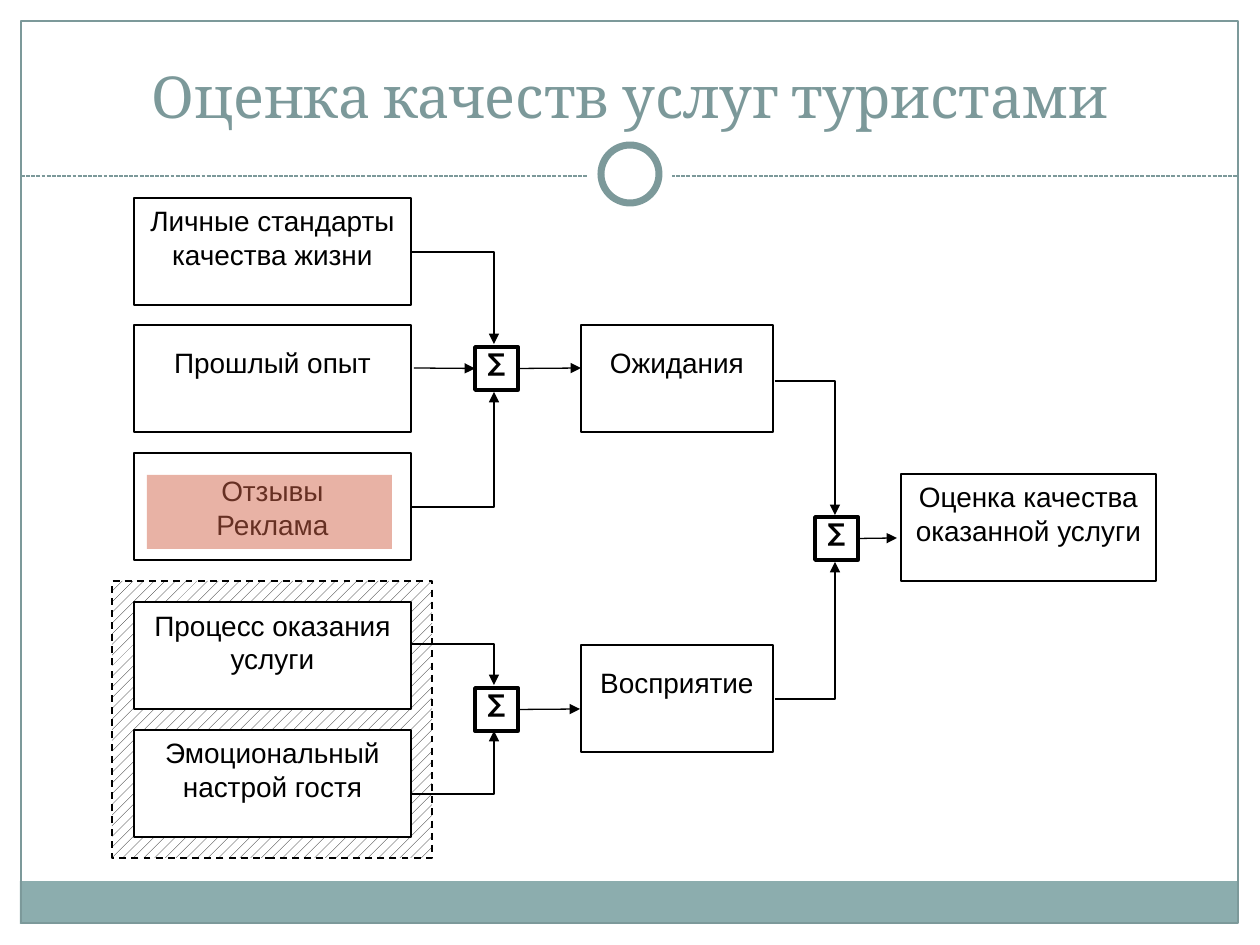
import pptx
import pptx.util
import pptx.dml.color
import pptx.enum.dml
import pptx.enum.shapes
import pptx.enum.text
import pptx.oxml.ns
from lxml import etree

RGB = pptx.dml.color.RGBColor
SHAPE = pptx.enum.shapes.MSO_SHAPE
ANCHOR = pptx.enum.text.MSO_ANCHOR
DASH = pptx.enum.dml.MSO_LINE
STRAIGHT = pptx.enum.shapes.MSO_CONNECTOR.STRAIGHT
Pt = pptx.util.Pt

WHITE = RGB(0xFF, 0xFF, 0xFF)
BLACK = RGB(0x00, 0x00, 0x00)
TEAL = RGB(0x7C, 0x99, 0x9A)
BAND = RGB(0x8C, 0xAD, 0xAE)
ACCENT = RGB(0xD1, 0x63, 0x49)

TITLE = "Оценка качеств услуг туристами"
LEFT, RIGHT, TOP, BOTTOM = 0, 1, 2, 3
BOX_H, SIGMA = 107, 43
SOURCE_X, SOURCE_W = 134, 277
STAGE_X, STAGE_W = 581, 192
LOW_TEXT, HIGH_TEXT = 21, 6  # top inset of the box text

# x, y, width, top inset, paragraphs
BOXES = [
    (SOURCE_X, 198, SOURCE_W, HIGH_TEXT, ["Личные стандарты качества жизни"]),
    (SOURCE_X, 325, SOURCE_W, LOW_TEXT, ["Прошлый опыт"]),
    (SOURCE_X, 453, SOURCE_W, LOW_TEXT, ["Отзывы", "Реклама"]),
    (SOURCE_X, 602, SOURCE_W, HIGH_TEXT, ["Процесс оказания услуги"]),
    (SOURCE_X, 730, SOURCE_W, HIGH_TEXT, ["Эмоциональный настрой гостя"]),
    (STAGE_X, 325, STAGE_W, LOW_TEXT, ["Ожидания"]),
    (STAGE_X, 645, STAGE_W, LOW_TEXT, ["Восприятие"]),
    (901, 474, 255, HIGH_TEXT, ["Оценка качества оказанной услуги"]),
]
SIGMAS = {"expect": (475, 347), "perceive": (475, 688), "rate": (815, 517)}
# start x, start y, corner x, end y
ELBOWS = [
    (411, 252, 494, 344),
    (412, 507, 494, 392),
    (412, 644, 494, 685),
    (411, 794, 494, 731),
    (775, 381, 835, 515),
    (775, 699, 835, 562),
]
# sigma, x where the outgoing arrow ends
OUTGOING = [("expect", 581), ("perceive", 580), ("rate", 897)]

prs = pptx.Presentation()
prs.slide_width = pptx.util.Inches(10)
prs.slide_height = pptx.util.Inches(7.5)
s = prs.slides.add_slide(prs.slide_layouts[6])


def px(n):
    return round(n * 914400 / 126)


def add_block(x, y, w, h, fill=None, line=None, width=1.0, kind=SHAPE.RECTANGLE):
    sp = s.shapes.add_shape(kind, px(x), px(y), px(w), px(h))
    sp.shadow.inherit = False
    if fill is None:
        sp.fill.background()
    else:
        sp.fill.solid()
        sp.fill.fore_color.rgb = fill
    if line is None:
        sp.line.fill.background()
    else:
        sp.line.color.rgb = line
        sp.line.width = Pt(width)
    return sp


def write(sp, paragraphs, size, font, color, insets, anchor=ANCHOR.TOP, strong=None):
    tf = sp.text_frame
    tf.word_wrap = True
    tf.vertical_anchor = anchor
    tf.margin_left, tf.margin_top, tf.margin_right, tf.margin_bottom = map(px, insets)
    for i, text in enumerate(paragraphs):
        p = tf.add_paragraph() if i else tf.paragraphs[0]
        p.alignment = pptx.enum.text.PP_ALIGN.CENTER
        r = p.add_run()
        r.text = text
        r.font.size = Pt(size)
        r.font.name = font
        r.font.bold = r.font.italic = strong
        r.font.color.rgb = color


def style_line(sp, color, arrow=True):
    sp.line.color.rgb = color
    sp.line.width = Pt(0.75)
    if arrow:
        ln = sp.line._get_or_add_ln()
        etree.SubElement(ln, pptx.oxml.ns.qn("a:tailEnd"), type="triangle")


def add_straight(x1, y1, x2, y2, color=BLACK, arrow=True):
    c = s.shapes.add_connector(STRAIGHT, px(x1), px(y1), px(x2), px(y2))
    style_line(c, color, arrow)
    etree.SubElement(c._element.spPr, pptx.oxml.ns.qn("a:effectLst"))
    return c


# Frame, footer band, divider and ring
add_block(20, 881, 1217, 43, BAND)
add_block(21, 21, 1217, 902, line=TEAL, width=0.75)
divider = add_straight(21, 176, 1239, 176, TEAL, arrow=False)
divider.line.dash_style = DASH.SQUARE_DOT
add_block(588, 132, 84, 84, WHITE, kind=SHAPE.OVAL)
add_block(601, 145, 58, 58, WHITE, TEAL, 4, SHAPE.OVAL)

# Title
title = s.shapes.add_textbox(px(42), px(32), px(1176), px(104))
write(title, [TITLE], 33, "Cambria", TEAL, (12, 6, 12, 6), ANCHOR.BOTTOM)

# Hatched group behind the two service boxes
group = add_block(112, 581, 320, 277, WHITE, BLACK)
group.line.dash_style = DASH.DASH
group.fill.patterned()
group.fill.pattern = pptx.enum.dml.MSO_PATTERN.PERCENT_20
group.fill.fore_color.rgb = BLACK
group.fill.back_color.rgb = WHITE

# Boxes
for x, y, w, top, paragraphs in BOXES:
    sp = add_block(x, y, w, BOX_H, WHITE, BLACK, 1.25)
    write(sp, paragraphs, 16, "Arial", BLACK, (12, top, 12, 6))

# Summation nodes
nodes = {}
for name, (x, y) in SIGMAS.items():
    nodes[name] = add_block(x, y, SIGMA, SIGMA, WHITE, BLACK, 2)
    write(nodes[name], ["∑"], 14, "Cabin", BLACK, (0, 0, 0, 0), strong=True)

# Elbow arrows
for x1, y1, x2, y2 in ELBOWS:
    path = s.shapes.build_freeform(px(x1), px(y1))
    path.add_line_segments([(px(x2), px(y1)), (px(x2), px(y2))], close=False)
    sp = path.convert_to_shape()
    sp.shadow.inherit = False
    sp.fill.background()
    style_line(sp, BLACK)

# Straight arrows into and out of the nodes
incoming = add_straight(414, 368, 475, 368)
incoming.end_connect(nodes["expect"], 1)
for name, end in OUTGOING:
    x, y = SIGMAS[name]
    mid = y + SIGMA // 2
    c = add_straight(x + SIGMA, mid, end, mid)
    c.begin_connect(nodes[name], 3)

# Translucent highlight
mark = add_block(147, 475, 245, 74, ACCENT)
clr = mark._element.spPr.find(".//" + pptx.oxml.ns.qn("a:srgbClr"))
etree.SubElement(clr, pptx.oxml.ns.qn("a:alpha"), val="49000")

prs.save("out.pptx")
